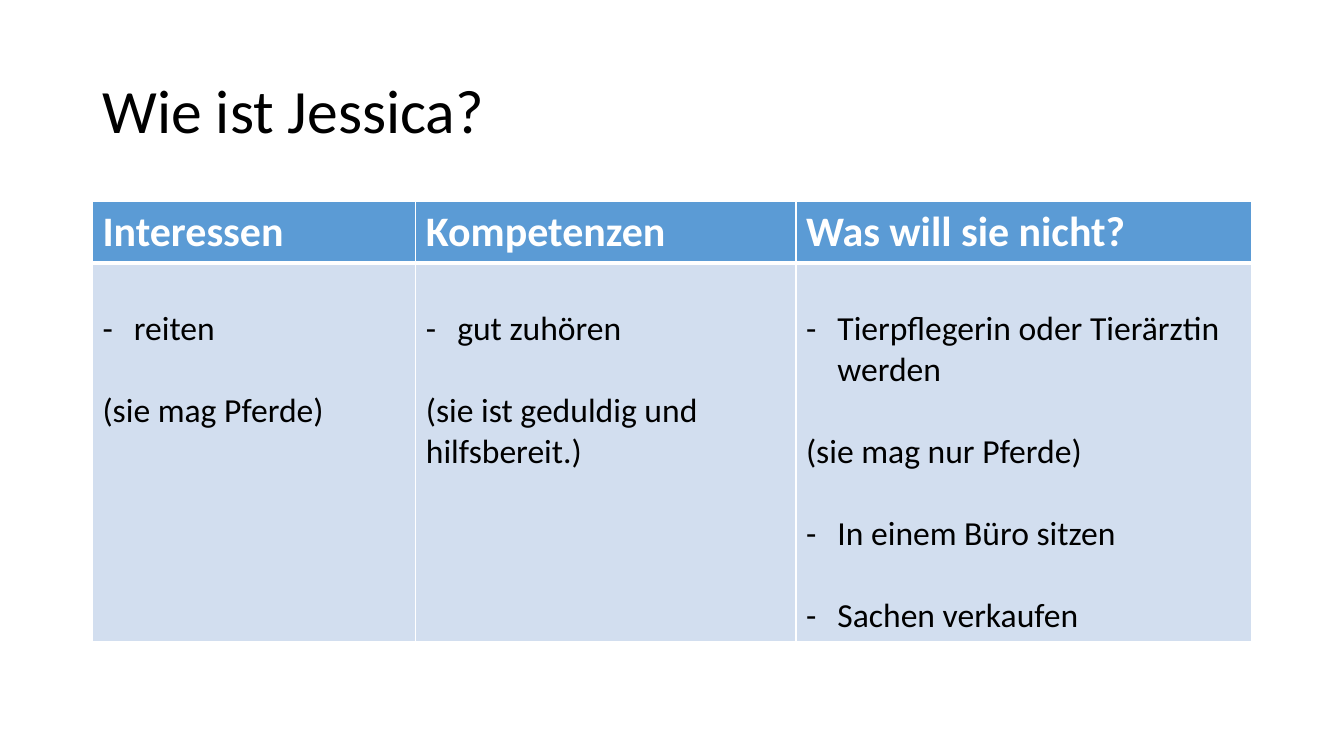
from lxml import etree
from pptx import Presentation, util as u
from pptx.dml.color import RGBColor
from pptx.enum import text
from pptx.oxml import ns

COLORS = {"header": "5B9BD5", "body": "D2DEEF", "white": "FFFFFF", "black": "000000"}
LINE_GAP = u.Cm(1.03)
INDENT = u.Cm(0.79)

# Heading, then entries; True marks a dashed entry
columns = [
    ("Interessen", 8.15, [("reiten", True), ("(sie mag Pferde)", False)]),
    ("Kompetenzen", 9.58, [("gut zuhören", True),
                           ("(sie ist geduldig und hilfsbereit.)", False)]),
    ("Was will sie nicht?", 11.48, [("Tierpflegerin oder Tierärztin werden", True),
                                    ("(sie mag nur Pferde)", False),
                                    ("In einem Büro sitzen", True),
                                    ("Sachen verkaufen", True)]),
]


def write(paragraph, words, size, color, bold=False):
    run = paragraph.add_run()
    run.text = words
    font_format = {"name": "Calibri", "size": u.Pt(size), "bold": bold}
    for attribute, value in font_format.items():
        setattr(run.font, attribute, value)
    run.font.color.rgb = RGBColor.from_string(COLORS[color])


def style_cell(cell, fill, bottom_width):
    """Draw white borders, then fill the cell."""
    properties = cell._tc.get_or_add_tcPr()
    for side, width in {"lnL": 1, "lnR": 1, "lnT": 1, "lnB": bottom_width}.items():
        border = etree.SubElement(properties, ns.qn(f"a:{side}"), w=str(u.Pt(width)))
        solid = etree.SubElement(border, ns.qn("a:solidFill"))
        etree.SubElement(solid, ns.qn("a:srgbClr"), val=COLORS["white"])
    cell.fill.solid()
    cell.fill.fore_color.rgb = RGBColor.from_string(COLORS[fill])


deck = Presentation()
deck.slide_width, deck.slide_height = u.Cm(33.87), u.Cm(19.05)
slide = deck.slides.add_slide(deck.slide_layouts[5])

title = slide.shapes.title
title_place = {"left": 2.33, "top": 1.01, "width": 29.21, "height": 3.68}
for attribute, value in title_place.items():
    setattr(title, attribute, u.Cm(value))
title.text_frame.auto_size = text.MSO_AUTO_SIZE.NONE
title.text_frame.vertical_anchor = text.MSO_ANCHOR.MIDDLE
question = title.text_frame.paragraphs[0]
question.alignment = text.PP_ALIGN.LEFT
question.line_spacing = 0.9
write(question, "Wie ist Jessica?", 44, "black")

profile = slide.shapes.add_table(2, len(columns), u.Cm(2.33), u.Cm(5.08),
                                 u.Cm(29.21), u.Cm(11.07)).table
profile.rows[0].height = u.Cm(1.52)
profile.rows[1].height = u.Cm(9.55)

for index, (heading, width, entries) in enumerate(columns):
    profile.columns[index].width = u.Cm(width)

    header = profile.cell(0, index)
    style_cell(header, "header", 3)
    write(header.text_frame.paragraphs[0], heading, 30, "white", bold=True)

    body = profile.cell(1, index)
    style_cell(body, "body", 1)
    body.margin_top = u.Cm(0.13) + LINE_GAP
    for number, (entry, dashed) in enumerate(entries):
        frame = body.text_frame
        paragraph = frame.add_paragraph() if number else frame.paragraphs[0]
        if number:
            paragraph.space_before = LINE_GAP
        if dashed:
            layout = paragraph._p.get_or_add_pPr()
            layout.set("marL", str(INDENT))
            layout.set("indent", str(-INDENT))
            etree.SubElement(layout, ns.qn("a:buFont"), typeface="Calibri")
            etree.SubElement(layout, ns.qn("a:buChar"), char="-")
        write(paragraph, entry, 24, "black")

deck.save("out.pptx")
